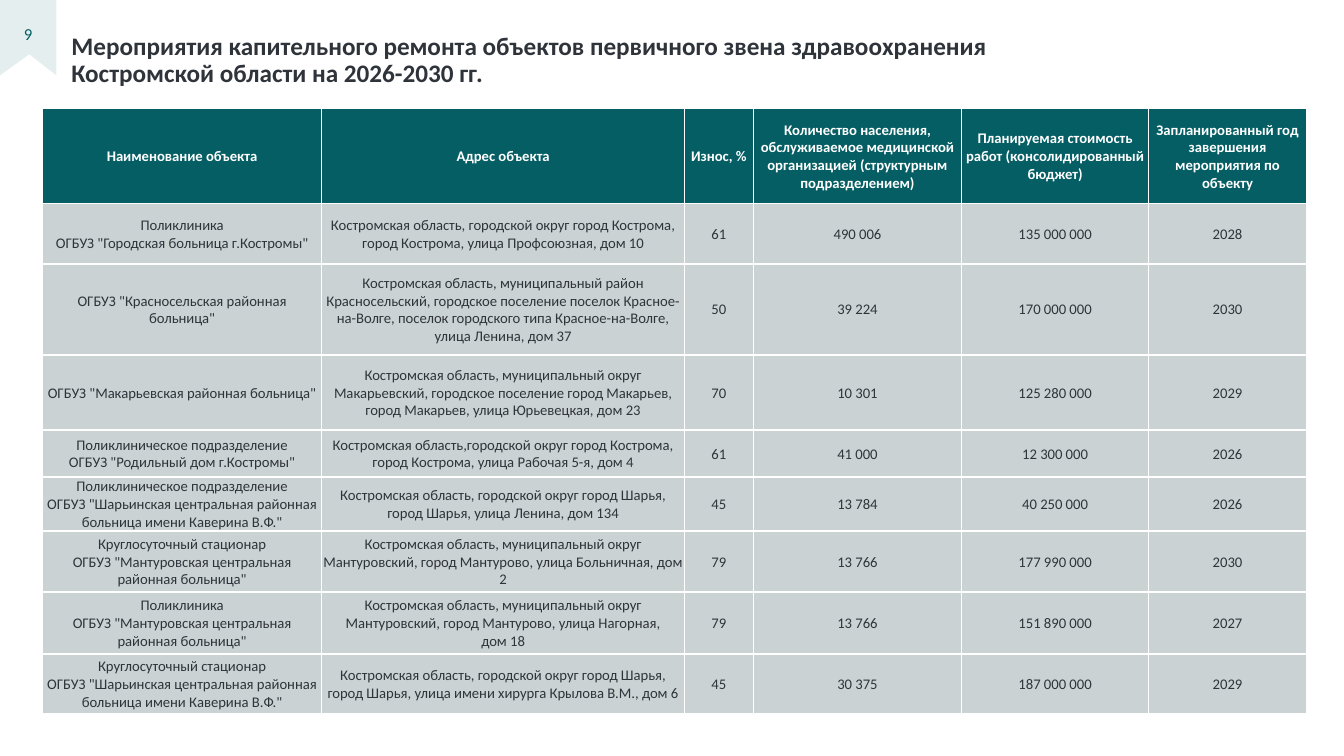
from lxml.etree import SubElement
from pptx import Presentation
from pptx.dml.color import RGBColor
from pptx.enum.text import MSO_ANCHOR as Anchor, PP_ALIGN as Align
from pptx.oxml.ns import qn
from pptx.util import Cm, Pt

# Content
PAGE_NUMBER = "9"
TITLE = """Мероприятия капительного ремонта объектов первичного звена здравоохранения
Костромской области на 2026-2030 гг."""
HEADERS = (
    "Наименование объекта", "Адрес объекта", "Износ, %",
    "Количество населения, обслуживаемое медицинской организацией (структурным подразделением)",
    "Планируемая стоимость работ (консолидированный бюджет)",
    "Запланированный год завершения мероприятия по объекту",
)
FACILITIES = [
    ('Поликлиника\nОГБУЗ "Городская больница г.Костромы"',
     "Костромская область, городской округ город Кострома, город Кострома, улица Профсоюзная, дом 10",
     "61", "490 006", "135 000 000", "2028"),
    ('ОГБУЗ "Красносельская районная больница"',
     "Костромская область, муниципальный район Красносельский, городское поселение поселок "
     "Красное-на-Волге, поселок городского типа Красное-на-Волге, улица Ленина, дом 37",
     "50", "39 224", "170 000 000", "2030"),
    ('ОГБУЗ "Макарьевская районная больница"',
     "Костромская область, муниципальный округ Макарьевский, городское поселение город Макарьев, "
     "город Макарьев, улица Юрьевецкая, дом 23",
     "70", "10 301", "125 280 000", "2029"),
    ('Поликлиническое подразделение\nОГБУЗ "Родильный дом г.Костромы"',
     "Костромская область,городской округ город Кострома, город Кострома, улица Рабочая 5-я, дом 4",
     "61", "41 000", "12 300 000", "2026"),
    ('Поликлиническое подразделение\nОГБУЗ "Шарьинская центральная районная больница имени Каверина В.Ф."',
     "Костромская область, городской округ город Шарья, город Шарья, улица Ленина, дом 134",
     "45", "13 784", "40 250 000", "2026"),
    ('Круглосуточный стационар\nОГБУЗ "Мантуровская центральная районная больница"',
     "Костромская область, муниципальный округ Мантуровский, город Мантурово, улица Больничная, дом 2",
     "79", "13 766", "177 990 000", "2030"),
    ('Поликлиника\nОГБУЗ "Мантуровская центральная районная больница"',
     "Костромская область, муниципальный округ Мантуровский, город Мантурово, улица Нагорная,\nдом 18",
     "79", "13 766", "151 890 000", "2027"),
    ('Круглосуточный стационар\nОГБУЗ "Шарьинская центральная районная больница имени Каверина В.Ф."',
     "Костромская область, городской округ город Шарья, город Шарья, улица имени хирурга Крылова В.М., дом 6",
     "45", "30 375", "187 000 000", "2029"),
]

# Sizes in centimetres
COLUMN_WIDTHS = (7.04, 9.14, 1.73, 5.26, 4.7, 3.99)
ROW_HEIGHTS = (2.39, 1.52, 2.29, 1.9, 1.17, 1.35, 1.55, 1.55, 1.52)
RIBBON = [(0, 0), (0, 1.9), (0.74, 1.37), (1.42, 1.9), (1.42, 0)]
TABLE_LEFT, TABLE_TOP = 1.07, 2.74

THEME = {
    "font": "Calibri",
    "teal": "045E64", "ink": "2F343B", "row": "CBD2D3", "white": "FFFFFF",
    "title": 18, "number": 12, "cell": 10.5,
    "ribbon_alpha": 10, "side_line": 1, "row_line": 1.5,
}


def colour(name):
    return RGBColor.from_string(THEME[name])


def format_text(text_frame, size, ink, bold=False, align=Align.CENTER, spacing=None):
    for paragraph in text_frame.paragraphs:
        paragraph.alignment = align
        paragraph.line_spacing = spacing
        for run in paragraph.runs:
            run.font.name = THEME["font"]
            run.font.size = Pt(THEME[size])
            run.font.bold = bold
            run.font.color.rgb = colour(ink)


def set_margins(target, left, top, right, bottom):
    target.margin_left, target.margin_top = Cm(left), Cm(top)
    target.margin_right, target.margin_bottom = Cm(right), Cm(bottom)


def add_borders(cell, top_line):
    side, row = THEME["side_line"], THEME["row_line"]
    properties = cell._tc.get_or_add_tcPr()
    for tag, width in (("lnL", side), ("lnR", side), ("lnT", top_line), ("lnB", row)):
        line = SubElement(properties, qn(f"a:{tag}"), w=str(Pt(width)))
        fill = SubElement(line, qn("a:solidFill"))
        SubElement(fill, qn("a:srgbClr"), val=THEME["white"])


def add_ribbon(slide):
    points = [(Cm(x), Cm(y)) for x, y in RIBBON]
    builder = slide.shapes.build_freeform(*points[0])
    builder.add_line_segments(points[1:], close=True)
    ribbon = builder.convert_to_shape()
    ribbon.shadow.inherit = False
    ribbon.line.fill.background()
    ribbon.fill.solid()
    ribbon.fill.fore_color.rgb = colour("teal")
    tint = ribbon.fill._xPr.find(qn("a:solidFill"))[0]
    SubElement(tint, qn("a:alpha"), val=str(THEME["ribbon_alpha"] * 1000))
    text_frame = ribbon.text_frame
    text_frame.text = PAGE_NUMBER
    text_frame.vertical_anchor = Anchor.MIDDLE
    set_margins(text_frame, 0.25, 0.2, 0.25, 0.4)
    format_text(text_frame, "number", "teal")


def add_title(slide):
    text_frame = slide.shapes.add_textbox(Cm(1.8), Cm(0.91), Cm(30.3), Cm(1.24)).text_frame
    text_frame.word_wrap = True
    text_frame.text = TITLE
    text_frame.vertical_anchor = Anchor.MIDDLE
    set_margins(text_frame, 0, 0, 0, 0)
    format_text(text_frame, "title", "ink", bold=True, align=Align.LEFT, spacing=0.9)


def add_facility_table(slide):
    rows = [HEADERS, *FACILITIES]
    table = slide.shapes.add_table(
        len(rows), len(HEADERS), Cm(TABLE_LEFT), Cm(TABLE_TOP),
        Cm(sum(COLUMN_WIDTHS)), Cm(sum(ROW_HEIGHTS))).table
    for column, width in zip(table.columns, COLUMN_WIDTHS):
        column.width = Cm(width)
    for row, height in zip(table.rows, ROW_HEIGHTS):
        row.height = Cm(height)
    for row_index, values in enumerate(rows):
        header = row_index == 0
        for column_index, value in enumerate(values):
            cell = table.cell(row_index, column_index)
            cell.text = value.replace("\n", "\v")  # line break inside one paragraph
            cell.vertical_anchor = Anchor.MIDDLE
            set_margins(cell, 0.03, 0.03, 0.03, 0)
            add_borders(cell, THEME["side_line" if header else "row_line"])
            cell.fill.solid()
            cell.fill.fore_color.rgb = colour("teal" if header else "row")
            format_text(cell.text_frame, "cell", "white" if header else "ink", bold=header)


def main():
    presentation = Presentation()
    presentation.slide_width, presentation.slide_height = Cm(33.87), Cm(19.05)
    slide = presentation.slides.add_slide(presentation.slide_layouts[6])
    add_ribbon(slide)
    add_title(slide)
    add_facility_table(slide)
    presentation.save("out.pptx")


if __name__ == "__main__":
    main()
